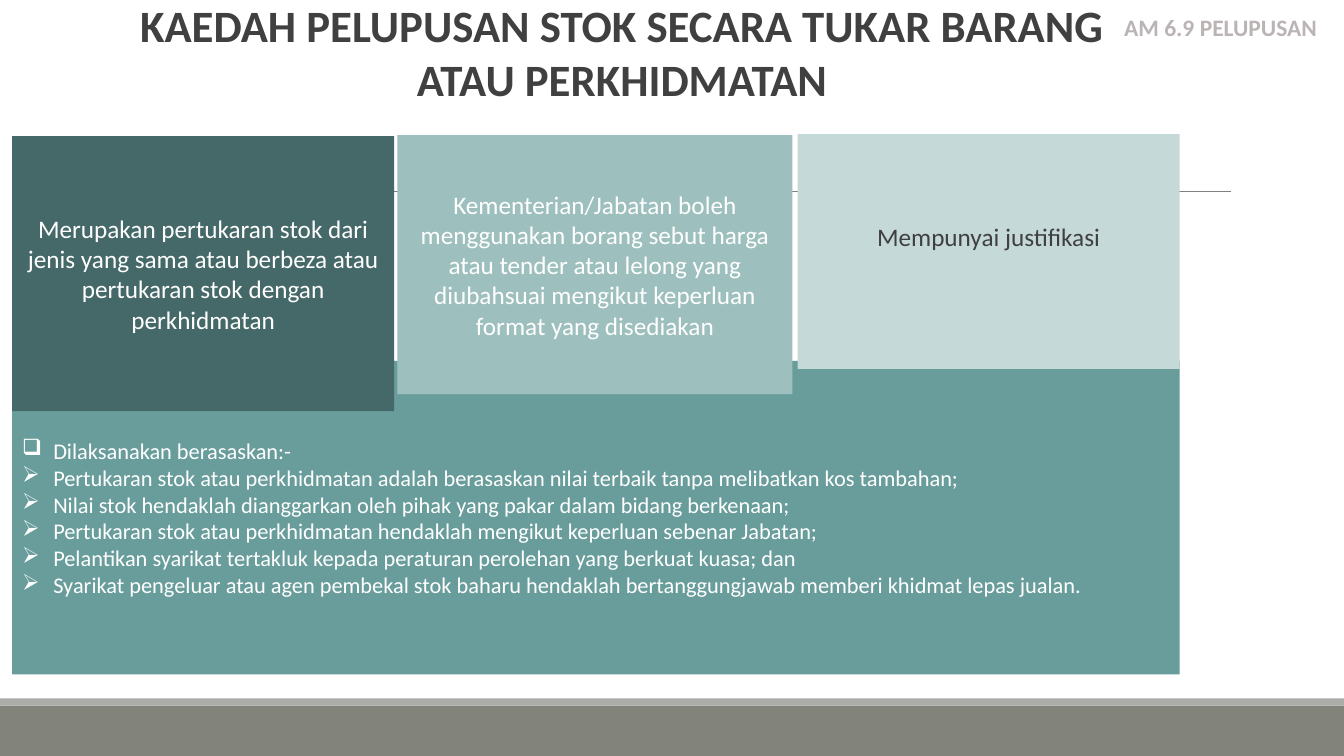
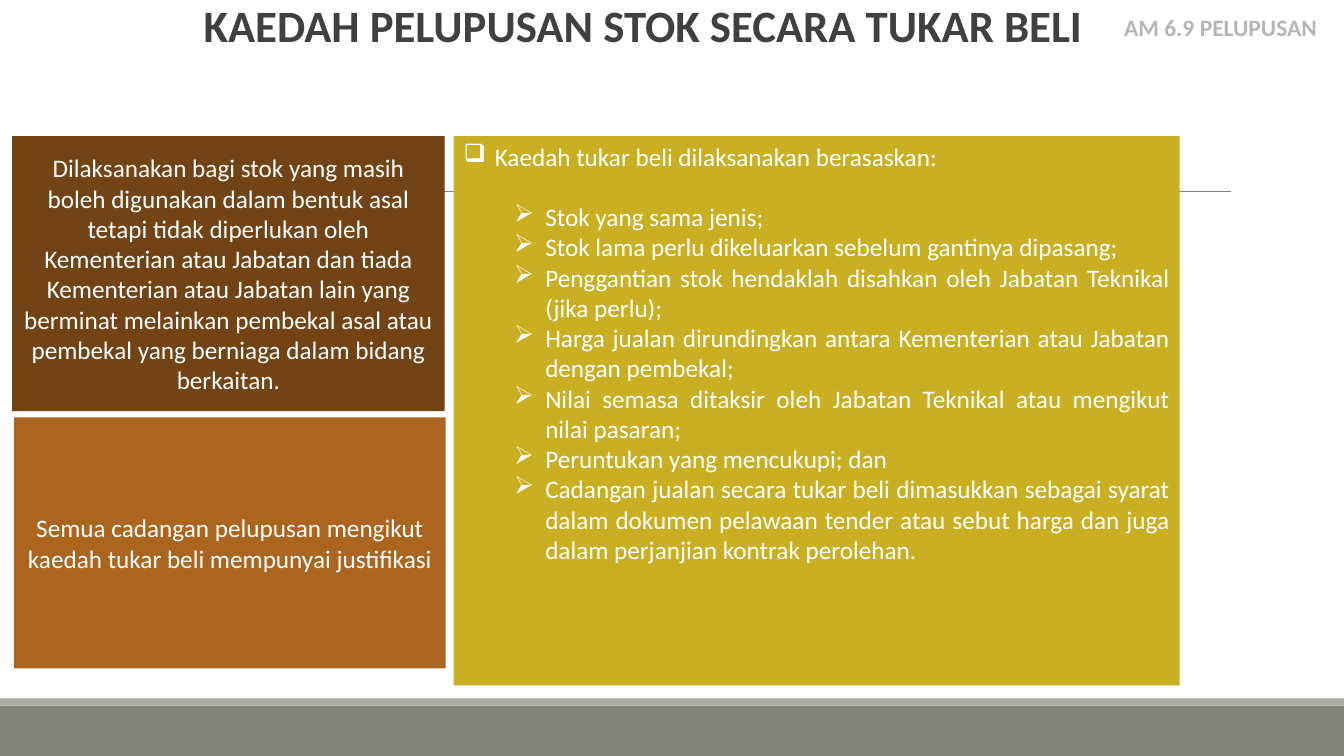
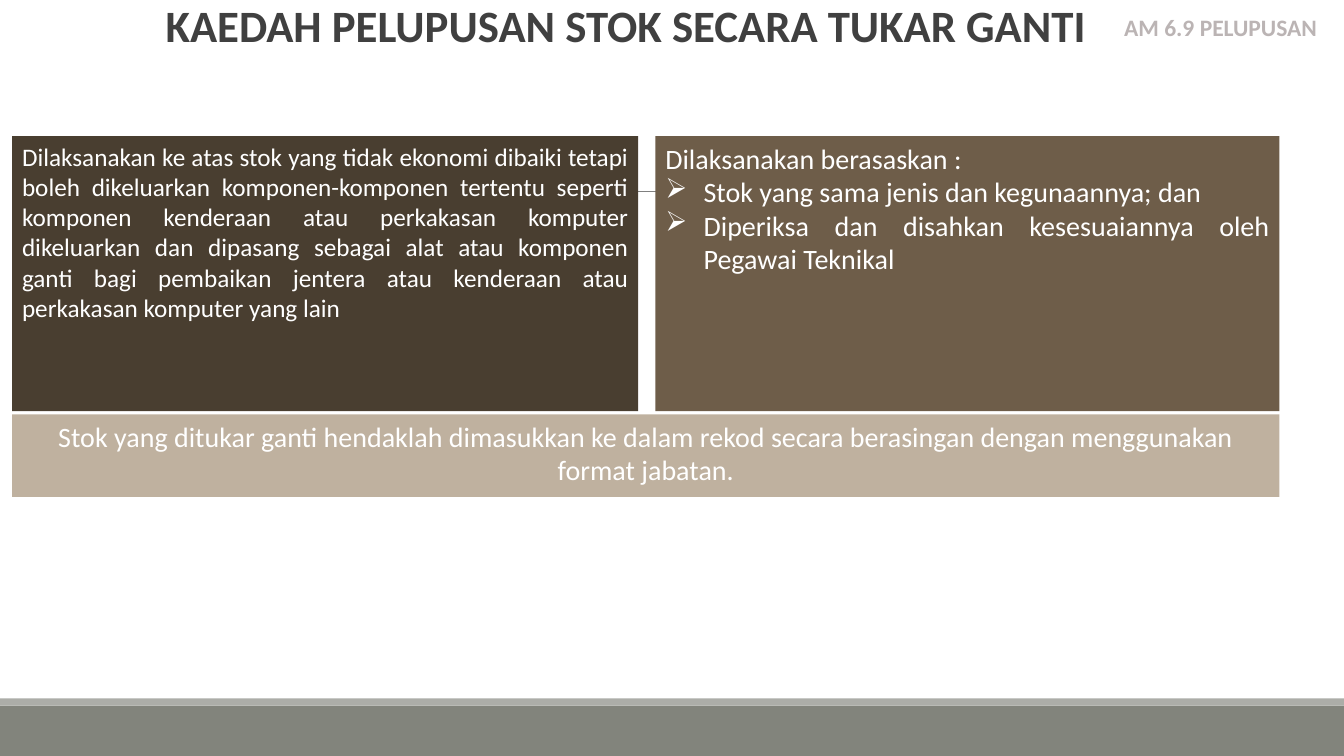
from dataclasses import dataclass

from lxml import etree
from pptx import Presentation
from pptx.dml.color import RGBColor
from pptx.enum.shapes import MSO_CONNECTOR, MSO_SHAPE
from pptx.enum.text import MSO_ANCHOR, PP_ALIGN
from pptx.oxml.ns import qn
from pptx.presentation import Presentation as Deck
from pptx.slide import Slide
from pptx.text.text import TextFrame
from pptx.util import Inches, Pt

RECTANGLE = MSO_SHAPE.RECTANGLE
STRAIGHT = MSO_CONNECTOR.STRAIGHT
TOP, MIDDLE = MSO_ANCHOR.TOP, MSO_ANCHOR.MIDDLE
CENTER, RIGHT, JUSTIFY = PP_ALIGN.CENTER, PP_ALIGN.RIGHT, PP_ALIGN.JUSTIFY


@dataclass(frozen=True)
class Theme:
    font: str = "Calibri"
    white: str = "FFFFFF"
    dark: str = "404040"
    tag: str = "BBB4B4"
    rule: str = "808080"
    footer: str = "82847C"
    footer_edge: str = "ACADA8"
    teal: str = "689D9B"
    teal_dark: str = "456968"
    teal_light: str = "9DBFBE"
    teal_pale: str = "C4D9D8"
    gold: str = "CBAF22"
    brown: str = "724314"
    orange: str = "AB651E"
    umber: str = "493E30"
    taupe: str = "6E5D49"
    sand: str = "BFB19F"
    title_size: float = 32
    tag_size: float = 16.8
    large: float = 20
    body: float = 18
    small: float = 16


THEME = Theme()


@dataclass(frozen=True)
class Line:
    text: str
    bullet: str = ""
    indent: float = 0
    hanging: float = 0.31
    level: int = 0
    space_before: float = 0


@dataclass(frozen=True)
class Style:
    size: float = THEME.body
    color: str = THEME.white
    bold: bool = False
    align: PP_ALIGN = CENTER
    anchor: MSO_ANCHOR = MIDDLE
    bottom_inset: float = 0.05


@dataclass(frozen=True)
class Area:
    left: float
    top: float
    width: float
    height: float

    def lengths(self) -> tuple[Inches, Inches, Inches, Inches]:
        return Inches(self.left), Inches(self.top), Inches(self.width), Inches(self.height)


@dataclass(frozen=True)
class Panel:
    area: Area
    fill: str
    lines: list[Line]
    style: Style = Style()


@dataclass(frozen=True)
class Page:
    title: str
    title_area: Area
    panels: list[Panel]


TITLE = Style(THEME.title_size, THEME.dark, bold=True, anchor=TOP)
TAG = Style(THEME.tag_size, THEME.tag, bold=True, align=RIGHT)
LEFT, ROW_TOP, ROW_HEIGHT = 0.12, 1.35, 2.73


def arrows(texts: list[str], indent: float, hanging: float = 0.31,
           level: int = 0, first_gap: float = 0) -> list[Line]:
    """Arrow-bulleted lines, with a gap in points above the first."""
    return [Line(text, "➢", indent, hanging, level, 0 if index else first_gap)
            for index, text in enumerate(texts)]


PAGES = [
    Page(
        "KAEDAH PELUPUSAN STOK SECARA TUKAR BARANG ATAU PERKHIDMATAN",
        Area(1.17, -0.07, 10, 1.18),
        [
            Panel(Area(LEFT, 3.58, 11.58, 3.11), THEME.teal, [
                Line("Dilaksanakan berasaskan:-", "❑", 0.31),
                *arrows([
                    "Pertukaran stok atau perkhidmatan adalah berasaskan nilai terbaik tanpa melibatkan kos tambahan;",
                    "Nilai stok hendaklah dianggarkan oleh pihak yang pakar dalam bidang berkenaan;",
                    "Pertukaran stok atau perkhidmatan hendaklah mengikut keperluan sebenar Jabatan;",
                    "Pelantikan syarikat tertakluk kepada peraturan perolehan yang berkuat kuasa; dan",
                    "Syarikat pengeluar atau agen pembekal stok baharu hendaklah bertanggungjawab "
                    "memberi khidmat lepas jualan.",
                ], 0.31),
            ], Style(THEME.small, align=JUSTIFY)),
            Panel(Area(LEFT, ROW_TOP, 3.79, ROW_HEIGHT), THEME.teal_dark, [
                Line("Merupakan pertukaran stok dari jenis yang sama atau berbeza atau "
                     "pertukaran stok dengan perkhidmatan"),
            ]),
            Panel(Area(7.91, 1.33, 3.79, 2.33), THEME.teal_pale,
                  [Line("Mempunyai justifikasi")],
                  Style(color=THEME.dark, bottom_inset=0.35)),
            Panel(Area(3.94, 1.34, 3.92, 2.57), THEME.teal_light, [
                Line("Kementerian/Jabatan boleh menggunakan borang sebut harga atau tender atau "
                     "lelong yang diubahsuai mengikut keperluan format yang disediakan"),
            ]),
        ],
    ),
    Page(
        "KAEDAH PELUPUSAN STOK SECARA TUKAR BELI",
        Area(1.17, -0.07, 10.42, 0.64),
        [
            Panel(Area(4.5, ROW_TOP, 7.2, 5.45), THEME.gold, [
                Line("Kaedah tukar beli dilaksanakan berasaskan:", "❑", 0.31),
                *arrows([
                    "Stok yang sama jenis;",
                    "Stok lama perlu dikeluarkan sebelum gantinya dipasang;",
                    "Penggantian stok hendaklah disahkan oleh Jabatan Teknikal (jika perlu);",
                    "Harga jualan dirundingkan antara Kementerian atau Jabatan dengan pembekal;",
                    "Nilai semasa ditaksir oleh Jabatan Teknikal atau mengikut nilai pasaran;",
                    "Peruntukan yang mencukupi; dan",
                    "Cadangan jualan secara tukar beli dimasukkan sebagai syarat dalam dokumen "
                    "pelawaan tender atau sebut harga dan juga dalam perjanjian kontrak perolehan.",
                ], 0.81, level=1, first_gap=21.6),
            ], Style(align=JUSTIFY, anchor=TOP)),
            Panel(Area(LEFT, ROW_TOP, 4.29, ROW_HEIGHT), THEME.brown, [
                Line("Dilaksanakan bagi stok yang masih boleh digunakan dalam bentuk asal tetapi "
                     "tidak diperlukan oleh Kementerian atau Jabatan dan tiada Kementerian atau "
                     "Jabatan lain yang berminat melainkan pembekal asal atau pembekal yang "
                     "berniaga dalam bidang berkaitan."),
            ]),
            Panel(Area(0.14, 4.14, 4.28, 2.49), THEME.orange, [
                Line("Semua cadangan pelupusan mengikut kaedah tukar beli mempunyai justifikasi"),
            ]),
        ],
    ),
    Page(
        "KAEDAH PELUPUSAN STOK SECARA TUKAR GANTI",
        Area(1.17, -0.07, 10.08, 0.64),
        [
            Panel(Area(LEFT, 4.11, 12.57, 0.82), THEME.sand, [
                Line("Stok yang ditukar ganti hendaklah dimasukkan ke dalam rekod secara "
                     "berasingan dengan menggunakan format jabatan."),
            ], Style(THEME.large, anchor=TOP)),
            Panel(Area(LEFT, ROW_TOP, 6.21, ROW_HEIGHT), THEME.umber, [
                Line("Dilaksanakan ke atas stok yang tidak ekonomi dibaiki tetapi boleh dikeluarkan "
                     "komponen-komponen tertentu seperti komponen kenderaan atau perkakasan "
                     "komputer dikeluarkan dan dipasang sebagai alat atau komponen ganti bagi "
                     "pembaikan jentera atau kenderaan atau perkakasan komputer yang lain"),
            ], Style(align=JUSTIFY, anchor=TOP)),
            Panel(Area(6.5, ROW_TOP, 6.19, ROW_HEIGHT), THEME.taupe, [
                Line("Dilaksanakan berasaskan :"),
                *arrows([
                    "Stok yang sama jenis dan kegunaannya; dan",
                    "Diperiksa dan disahkan kesesuaiannya oleh Pegawai Teknikal",
                ], 0.38, hanging=0.38),
            ], Style(THEME.large, align=JUSTIFY, anchor=TOP)),
        ],
    ),
]


def write(frame: TextFrame, lines: list[Line], style: Style) -> None:
    frame.word_wrap = True
    frame.vertical_anchor = style.anchor
    frame.margin_bottom = Inches(style.bottom_inset)
    for index, line in enumerate(lines):
        para = frame.add_paragraph() if index else frame.paragraphs[0]
        para.text = line.text
        para.level = line.level
        para.alignment = style.align
        if line.bullet:
            properties = para._p.get_or_add_pPr()
            properties.set("marL", str(Inches(line.indent)))
            properties.set("indent", str(-Inches(line.hanging)))
            etree.SubElement(properties, qn("a:buChar"), char=line.bullet)
        if line.space_before:
            para.space_before = Pt(line.space_before)
        para.font.name = THEME.font
        para.font.size = Pt(style.size)
        para.font.bold = style.bold
        para.font.color.rgb = RGBColor.from_string(style.color)


def add_box(page: Slide, area: Area, fill: str) -> TextFrame:
    box = page.shapes.add_shape(RECTANGLE, *area.lengths())
    box.shadow.inherit = False
    box.fill.solid()
    box.fill.fore_color.rgb = RGBColor.from_string(fill)
    box.line.fill.background()
    return box.text_frame


def add_text(page: Slide, area: Area, text: str, style: Style) -> None:
    box = page.shapes.add_textbox(*area.lengths())
    write(box.text_frame, [Line(text)], style)


def add_backdrop(page: Slide) -> None:
    """Footer bands and the thin rule behind the panels."""
    add_box(page, Area(0, 7, 13.33, 0.5), THEME.footer)
    add_box(page, Area(0, 6.93, 13.33, 0.07), THEME.footer_edge)
    rule = page.shapes.add_connector(STRAIGHT, Inches(1.31), Inches(1.9), Inches(12.21), Inches(1.9))
    rule.line.color.rgb = RGBColor.from_string(THEME.rule)
    rule.line.width = Pt(0.5)
    etree.SubElement(rule._element.spPr, qn("a:effectLst"))


def add_page(deck: Deck, content: Page) -> None:
    page = deck.slides.add_slide(deck.slide_layouts[6])
    add_backdrop(page)
    for panel in content.panels:
        write(add_box(page, panel.area, panel.fill), panel.lines, panel.style)
    add_text(page, content.title_area, content.title, TITLE)
    add_text(page, Area(1.08, 0.1, 12.08, 0.33), "AM 6.9 PELUPUSAN", TAG)


def main() -> None:
    deck = Presentation()
    deck.slide_width, deck.slide_height = Inches(13.33), Inches(7.5)
    for content in PAGES:
        add_page(deck, content)
    deck.save("out.pptx")


if __name__ == "__main__":
    main()
